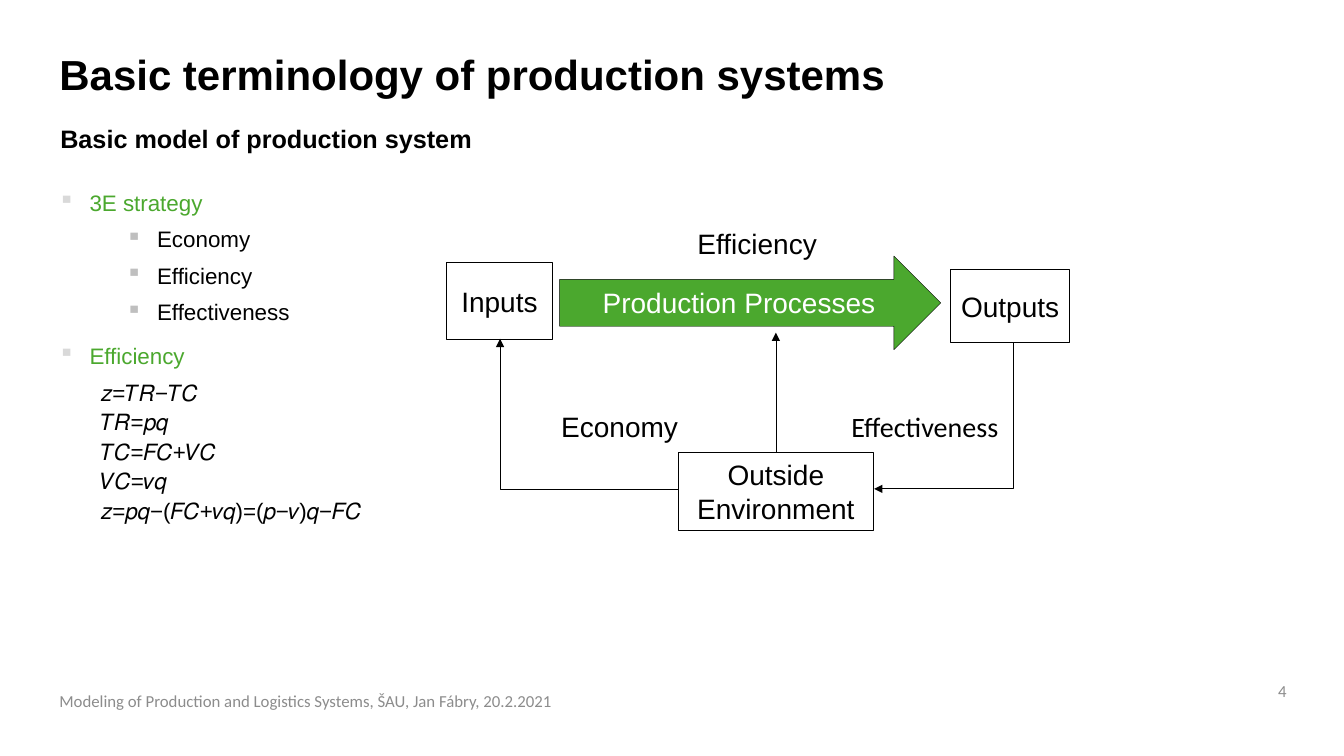
from lxml.etree import SubElement
from pptx import Presentation
from pptx.dml.color import RGBColor
from pptx.enum.shapes import MSO_CONNECTOR as LINK, MSO_SHAPE as SHAPE
from pptx.enum.text import MSO_ANCHOR as ANCHOR, PP_ALIGN as ALIGN
from pptx.oxml.ns import qn
from pptx.util import Emu, Inches, Pt

COLORS = {"ink": "000000", "paper": "FFFFFF", "green": "4BA82E",
          "footer": "8C8C8C", "bullet": "D9D9D9", "sub_bullet": "BFBFBF"}


class SlideBuilder:
    """Places elements on a grid of 100 columns by 100 rows."""

    def __init__(self, deck):
        self.slide = deck.slides.add_slide(deck.slide_layouts[6])
        self.shapes = self.slide.shapes
        self.column = deck.slide_width / 100
        self.row = deck.slide_height / 100

    def grid(self, *cells):
        units = (self.column, self.row) * 2
        return [Emu(round(cell * unit)) for cell, unit in zip(cells, units)]

    def color(self, name):
        return RGBColor.from_string(COLORS[name])

    def style(self, paragraph, size, color="ink", font="Arial", bold=False):
        for run in paragraph.runs:
            run.font.size, run.font.name, run.font.bold = Pt(size), font, bold
            run.font.color.rgb = self.color(color)
        for line_break in paragraph._p.findall(qn("a:br")):
            SubElement(line_break, qn("a:rPr"), sz=str(size * 100))

    def text(self, at, words, size, align=ALIGN.LEFT, anchor=ANCHOR.TOP,
             wrap=True, spacing=None, **look):
        frame = self.shapes.add_textbox(*self.grid(*at)).text_frame
        frame.word_wrap, frame.vertical_anchor = wrap, anchor
        paragraph = frame.paragraphs[0]
        paragraph.text = words
        paragraph.alignment, paragraph.line_spacing = align, spacing
        self.style(paragraph, size, **look)

    def outline(self, at, items):
        frame = self.shapes.add_textbox(*self.grid(*at)).text_frame
        frame.word_wrap = True
        for index, (words, level, color, bullet, margin, hanging) in enumerate(items):
            paragraph = frame.add_paragraph() if index else frame.paragraphs[0]
            paragraph.text = words
            paragraph.level, paragraph.line_spacing = level, 1.1
            if index:
                paragraph.space_before = Pt(5 if level else 10)
            props = paragraph._p.get_or_add_pPr()
            props.set("marL", str(Inches(margin)))
            props.set("indent", str(-Inches(hanging)))
            if bullet:
                tint = SubElement(props, qn("a:buClr"))
                SubElement(tint, qn("a:srgbClr"), val=COLORS[bullet])
                SubElement(props, qn("a:buChar"), char="▪")
            else:
                SubElement(props, qn("a:buNone"))
            self.style(paragraph, 16, color)

    def shape(self, at, words="", kind=SHAPE.RECTANGLE, fill="paper", line=0.5, font="Arial"):
        shape = self.shapes.add_shape(kind, *self.grid(*at))
        shape.shadow.inherit = False
        shape.fill.solid()
        shape.fill.fore_color.rgb = self.color(fill)
        if line:
            shape.line.color.rgb, shape.line.width = self.color("ink"), Pt(line)
        else:
            shape.line.fill.background()
        if words:
            frame = shape.text_frame
            frame.word_wrap, frame.vertical_anchor = False, ANCHOR.MIDDLE
            paragraph = frame.paragraphs[0]
            paragraph.text = words
            paragraph.alignment = ALIGN.CENTER
            self.style(paragraph, 20, font=font)
        return shape

    def arrow(self, ends, kind=LINK.STRAIGHT):
        arrow = self.shapes.add_connector(kind, *self.grid(*ends))
        arrow.line.color.rgb, arrow.line.width = self.color("ink"), Pt(0.5)
        SubElement(arrow.line._get_or_add_ln(), qn("a:tailEnd"), type="triangle")
        SubElement(arrow._element.spPr, qn("a:effectLst"))
        return arrow


def main():
    deck = Presentation()
    deck.slide_width, deck.slide_height = Inches(13.33), Inches(7.5)
    page = SlideBuilder(deck)

    # Headings, page number and footer
    page.text((93.85, 89.2, 2.63, 4.4), "4", 12, ALIGN.RIGHT, ANCHOR.MIDDLE,
              wrap=False, color="footer", font="Calibri")
    page.text((3.68, 6.53, 76, 7.6), "Basic terminology of production systems", 30,
              spacing=0.9, bold=True)
    page.text((3.75, 15.6, 75.84, 5.33), "Basic model of production system", 18, bold=True)
    page.text((3.68, 90, 53.8, 5.33),
              "Modeling of Production and Logistics Systems, ŠAU, Jan Fábry, 20.2.2021",
              12, anchor=ANCHOR.MIDDLE, color="footer", font="Calibri")

    # Strategy outline and formulas
    formulas = ("𝑧=𝑇𝑅−𝑇𝐶", "𝑇𝑅=𝑝𝑞", "𝑇𝐶=𝐹𝐶+𝑉𝐶", "𝑉𝐶=𝑣𝑞", "𝑧=𝑝𝑞−(𝐹𝐶+𝑣𝑞)=(𝑝−𝑣)𝑞−𝐹𝐶")
    topic = (0, "green", "bullet", 0.31, 0.31)
    point = (1, "ink", "sub_bullet", 0.98, 0.31)
    page.outline((3.6, 24, 86.5, 65.2), [
        ("3E strategy", *topic),
        *((goal, *point) for goal in ("Economy", "Efficiency", "Effectiveness")),
        ("Efficiency", *topic),
        ("\v".join(formulas), 1, "ink", None, 0.42, 0),
    ])

    # Production flow, from inputs through processes
    to_processes = page.arrow((57.73, 59.87, 57.73, 44))
    page.shape((33.23, 34.67, 7.88, 10.27), "Inputs")
    page.shape((41.64, 33.87, 28.36, 12.4), kind=SHAPE.RIGHT_ARROW, fill="green", line=0.25)
    page.shape((52.29, 27.6, 8.1, 9.2), "Efficiency", line=0)

    # Elbow arrow from outputs to the environment, bending near its start
    from_outputs = page.arrow((77.04, 41.33, 65.04, 64.67), LINK.ELBOW)
    bend = from_outputs._element.spPr.prstGeom.get_or_add_avLst()
    SubElement(bend, qn("a:gd"), name="adj1", fmla="val 13800")
    page.text((39.31, 35.33, 31.36, 9.33), "Production Processes", 20, ALIGN.CENTER,
              ANCHOR.MIDDLE, wrap=False, color="paper")

    # Single-bend arrow from the environment up to inputs
    to_inputs = page.arrow((37.21, 44.8, 50.94, 64.67), LINK.ELBOW)
    to_inputs._element.spPr.prstGeom.set("prst", "bentConnector2")
    to_inputs._element.spPr.xfrm.set("rot", "10800000")

    # Labels, environment and outputs
    page.shape((41.64, 51.73, 8.93, 9.2), "Economy", line=0)
    page.shape((64.8, 51.73, 8.03, 9.2), "Effectiveness", line=0, font="Calibri")
    environment = page.shape((50.49, 59.87, 14.48, 10.27), "Outside\vEnvironment")
    to_processes.begin_connect(environment, 0)
    to_processes.end_x = to_processes.begin_x
    page.shape((70.74, 35.6, 8.85, 9.73), "Outputs")

    deck.save("out.pptx")


if __name__ == "__main__":
    main()
